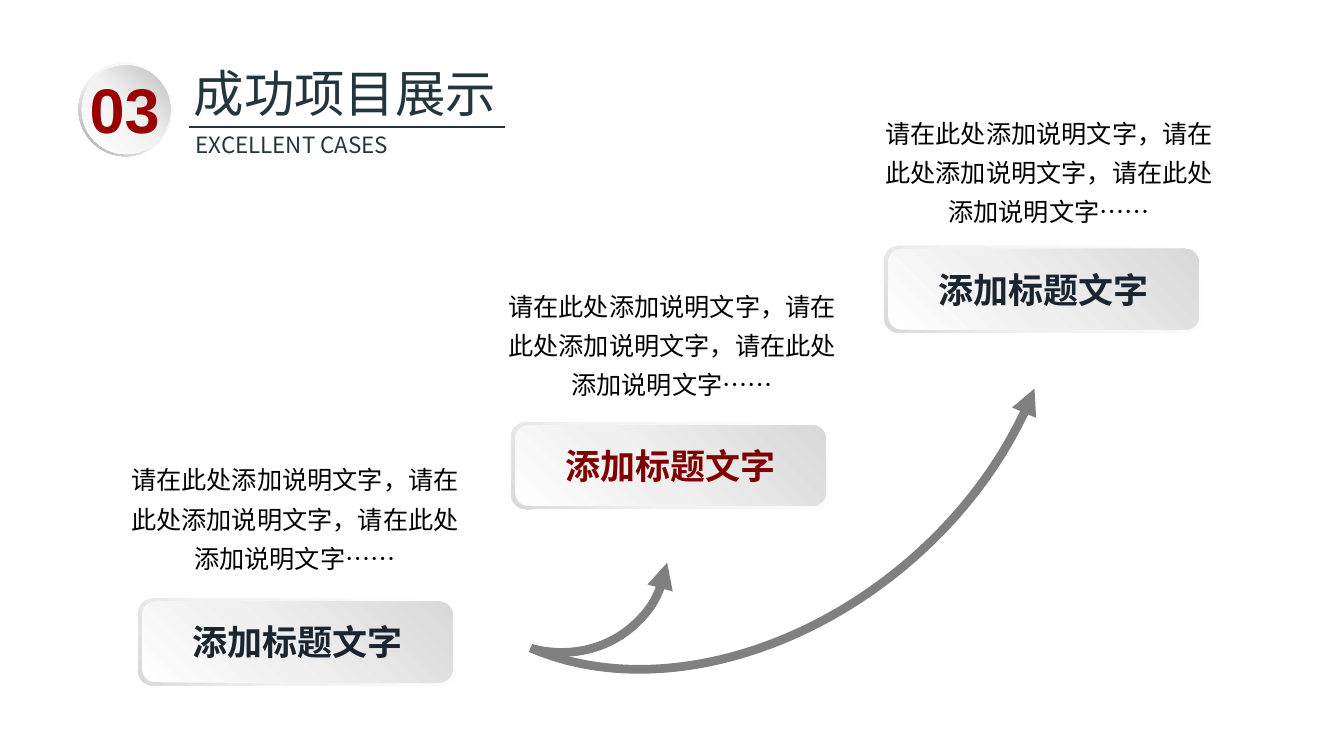
from lxml import etree
from pptx import Presentation
from pptx.dml.color import RGBColor
from pptx.enum.shapes import MSO_CONNECTOR, MSO_SHAPE
from pptx.enum.text import MSO_AUTO_SIZE, PP_ALIGN
from pptx.oxml.ns import qn
from pptx.util import Inches, Pt

ROUNDED, ARC = MSO_SHAPE.ROUNDED_RECTANGLE, MSO_SHAPE.ARC
DONUT, OVAL = MSO_SHAPE.DONUT, MSO_SHAPE.OVAL
LEFT, CENTER, JUSTIFY = PP_ALIGN.LEFT, PP_ALIGN.CENTER, PP_ALIGN.JUSTIFY

SLATE = RGBColor(0x23, 0x35, 0x3D)
NAVY = RGBColor(0x19, 0x25, 0x30)
MAROON = RGBColor(0x80, 0x00, 0x00)
RED = RGBColor(0x99, 0x00, 0x00)
GRAY = RGBColor(0x80, 0x80, 0x80)
BLACK = RGBColor(0x00, 0x00, 0x00)
WHITE = RGBColor(0xFF, 0xFF, 0xFF)
PALE = RGBColor(0xF2, 0xF2, 0xF2)
MIST = RGBColor(0xF0, 0xF0, 0xF0)
SILVER = RGBColor(0xD9, 0xD9, 0xD9)
STEEL = RGBColor(0xBF, 0xBF, 0xBF)
ASH = RGBColor(0xA6, 0xA6, 0xA6)

CJK_FONT, NUMBER_FONT = "Noto Sans CJK SC", "Arial"
SECTION, TITLE, SUBTITLE = "03", "成功项目展示", "EXCELLENT CASES"
DESCRIPTION = "请在此处添加说明文字，请在此处添加说明文字，请在此处添加说明文字……"
STEPS = [
    ("添加标题文字", DESCRIPTION, NAVY),
    ("添加标题文字", DESCRIPTION, MAROON),
    ("添加标题文字", DESCRIPTION, NAVY),
]
# Each staircase: first left and top, then the move per step
CARD_STAIRS = (1.37, 5.94, 3.7, -1.75)
DESCRIPTION_STAIRS = (1.2, 4.47, 3.74, -1.72)

# Gradient stops as (percent, colour), and clockwise angle
CARD_RIM = [(0, WHITE), (62, PALE), (100, SILVER)], 135
CARD_FACE = [(0, WHITE), (42, MIST), (100, SILVER)], 315
BADGE_RIM = [(0, WHITE), (55, PALE), (100, ASH)], 135
BADGE_FACE = [(0, WHITE), (51, PALE), (100, STEEL)], 315

# Box, rotation, arc adjustments
ARROWS = [
    ((4.36, 4.1, 2.22, 2.42), 135.7, (142.6, 193.88)),
    ((3.65, 0.86, 7.18, 5.38), 140.2, (135.35, 206.58)),
]


def add_gradient_shape(page, kind, area, gradient):
    stops, angle = gradient
    shape = page.shapes.add_shape(kind, *map(Inches, area))
    shape.shadow.inherit = False
    shape.line.fill.background()
    shape.fill.gradient()
    shape.fill.gradient_angle = 360 - angle
    stop_list = shape._element.spPr.find(".//" + qn("a:gsLst"))
    for old_stop in list(stop_list):
        stop_list.remove(old_stop)
    for percent, color in stops:
        stop = etree.SubElement(stop_list, qn("a:gs"), pos=str(percent * 1000))
        etree.SubElement(stop, qn("a:srgbClr"), val=str(color))
    return shape


def add_text(page, area, text, size, color, align=LEFT, bold=False,
             font=CJK_FONT, insets=(0.1, 0.05), wrap=True, spacing=None):
    box = page.shapes.add_textbox(*map(Inches, area))
    frame = box.text_frame
    frame.word_wrap = wrap
    frame.auto_size = MSO_AUTO_SIZE.SHAPE_TO_FIT_TEXT
    frame.margin_left = frame.margin_right = Inches(insets[0])
    frame.margin_top = frame.margin_bottom = Inches(insets[1])
    para = frame.paragraphs[0]
    para.text = text
    para.alignment = align
    para.line_spacing = spacing
    para.font.size = Pt(size)
    para.font.bold = bold
    para.font.color.rgb = color
    para.font.name = font
    properties = para._p.pPr.find(qn("a:defRPr"))
    etree.SubElement(properties, qn("a:ea"), typeface=font)


def add_header(page):
    add_text(page, (1.85, 0.58, 3.18, 0.68), TITLE, 36, SLATE,
             insets=(0.07, 0.04), wrap=False)
    add_text(page, (1.87, 1.26, 3.14, 0.34), SUBTITLE, 16, SLATE,
             align=JUSTIFY, insets=(0.07, 0.04))
    rule = page.shapes.add_connector(
        MSO_CONNECTOR.STRAIGHT, *map(Inches, (1.87, 1.26, 5.01, 1.26)))
    rule.line.color.rgb = SLATE
    rule.line.width = Pt(1.75)
    etree.SubElement(rule._element.spPr, qn("a:effectLst"))


def add_badge(page):
    rim = add_gradient_shape(page, DONUT, (0.78, 0.62, 0.93, 0.93), BADGE_RIM)
    rim.adjustments[0] = 0.06
    add_gradient_shape(page, OVAL, (0.81, 0.65, 0.88, 0.88), BADGE_FACE)
    add_text(page, (0.79, 0.65, 0.9, 0.86), SECTION, 45, RED,
             bold=True, font=NUMBER_FONT, wrap=False)


def stair_position(stairs, index):
    left, top, across, down = stairs
    return left + across * index, top + down * index


def add_step(page, index, heading, description, color):
    left, top = stair_position(CARD_STAIRS, index)
    add_gradient_shape(page, ROUNDED, (left, top, 3.15, 0.86), CARD_RIM)
    add_gradient_shape(page, ROUNDED, (left + 0.04, top + 0.03, 3.08, 0.8),
                       CARD_FACE)
    add_text(page, (left + 0.22, top + 0.22, 2.72, 0.42), heading, 25, color,
             align=CENTER, bold=True, insets=(0, 0))
    left, top = stair_position(DESCRIPTION_STAIRS, index)
    add_text(page, (left, top, 3.45, 1.28), description, 18, BLACK,
             align=CENTER, spacing=1.3)


def add_arrow(page, area, rotation, angles):
    arrow = page.shapes.add_shape(ARC, *map(Inches, area))
    arrow.shadow.inherit = False
    arrow.fill.background()
    arrow.rotation = rotation
    arrow.adjustments[0], arrow.adjustments[1] = angles
    arrow.line.color.rgb = GRAY
    arrow.line.width = Pt(6.25)
    etree.SubElement(arrow.line._get_or_add_ln(), qn("a:headEnd"),
                     type="triangle")


def main():
    deck = Presentation()
    deck.slide_width, deck.slide_height = Inches(13.33), Inches(7.5)
    page = deck.slides.add_slide(deck.slide_layouts[6])
    add_header(page)
    for index, step in enumerate(STEPS):
        add_step(page, index, *step)
    for arrow in ARROWS:
        add_arrow(page, *arrow)
    add_badge(page)
    deck.save("out.pptx")


if __name__ == "__main__":
    main()
